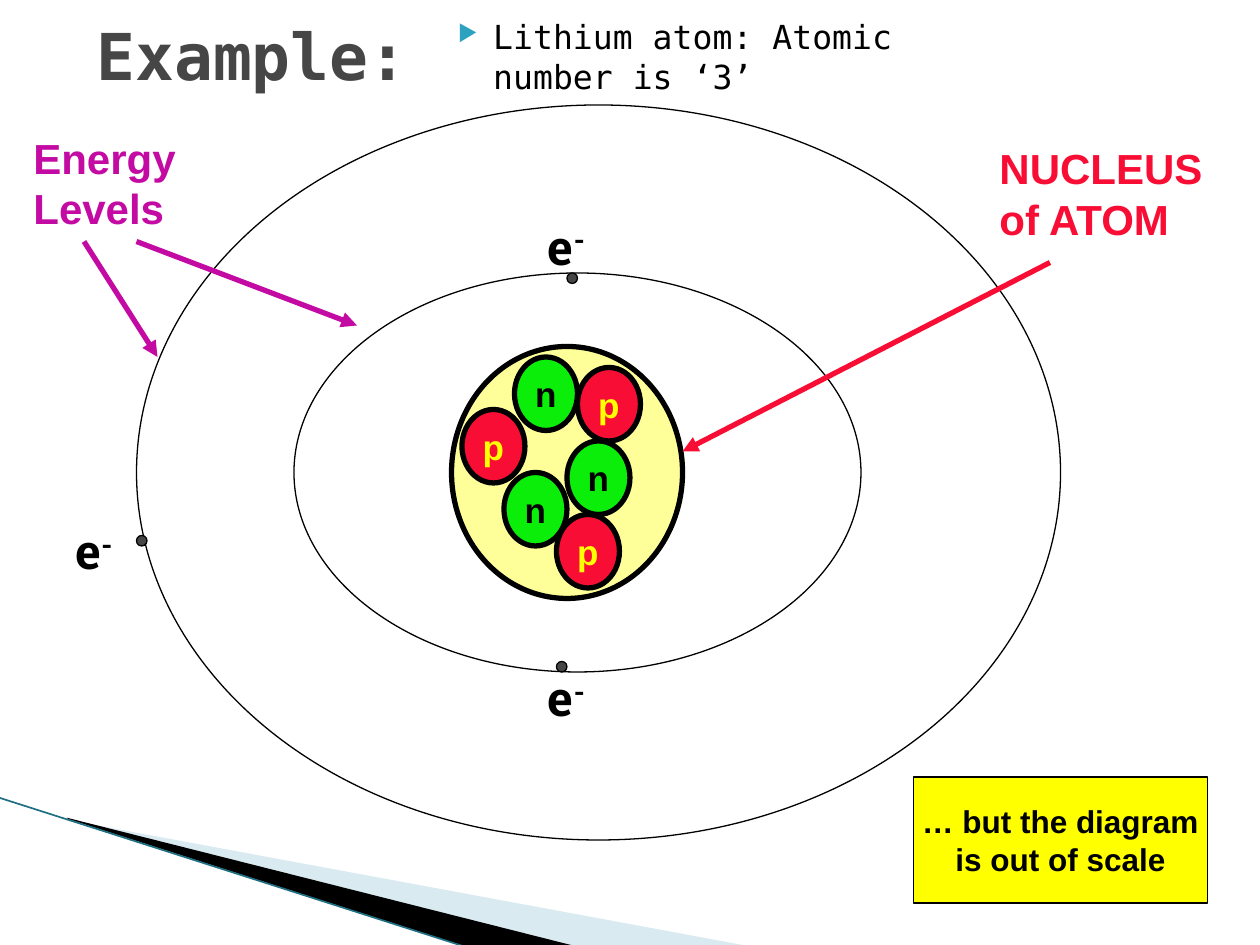
from lxml.etree import SubElement
from pptx import Presentation
from pptx.dml.color import RGBColor
from pptx.enum.shapes import MSO_CONNECTOR, MSO_SHAPE
from pptx.enum.text import MSO_ANCHOR, PP_ALIGN
from pptx.oxml.ns import qn
from pptx.util import Inches, Pt

COLORS = {
    "black": "000000", "gray": "464646", "teal": "1F6F82", "mist": "A0CBDC",
    "bullet": "2DA2BF", "core": "FFFF99", "neutron": "0AEE0A",
    "proton": "F80E35", "level": "C30BA4", "yellow": "FFFF00",
}
MONO, SANS, SLAB = "DejaVu Sans Mono", "Arial", "Roboto Slab"
NEUTRONS = [(48, 45), (54, 42), (49, 34)]
PROTONS = [(44, 39), (53, 49), (55, 35)]
ELECTRON_LABELS = [(6, 49), (51, 63), (51, 20)]
ELECTRONS = [(53, 63), (54, 26), (13, 51)]


def grid(cells):
    """Return the length of a number of cells, twelve to the inch."""
    return Inches(cells / 12)


def rgb(name):
    """Look up a colour by its name."""
    return RGBColor.from_string(COLORS[name])


def style_text(frame, size, font, color, bold=True, align=PP_ALIGN.LEFT):
    """Format every run of a text frame."""
    for paragraph in frame.paragraphs:
        paragraph.alignment = align
        for run in paragraph.runs:
            run.font.size, run.font.name, run.font.bold = Pt(size), font, bold
            run.font.color.rgb = rgb(color)


def add_label(slide, box, words, size, font, color, bold=True):
    """Add a wrapped text box and return its text frame."""
    frame = slide.shapes.add_textbox(*map(grid, box)).text_frame
    frame.word_wrap = True
    frame.text = words
    style_text(frame, size, font, color, bold)
    return frame


def add_figure(slide, box, fill=None, weight=0.75, kind=MSO_SHAPE.OVAL):
    """Add a black-edged shape, hollow unless a fill is named."""
    figure = slide.shapes.add_shape(kind, *map(grid, box))
    figure.shadow.inherit = False
    if fill:
        figure.fill.solid()
        figure.fill.fore_color.rgb = rgb(fill)
    else:
        figure.fill.background()
    figure.line.color.rgb = rgb("black")
    figure.line.width = Pt(weight)
    return figure


def add_caption(figure, words, size, color):
    """Centre unwrapped words in a shape."""
    frame = figure.text_frame
    frame.word_wrap = False
    frame.vertical_anchor = MSO_ANCHOR.MIDDLE
    frame.text = words
    style_text(frame, size, SANS, color, align=PP_ALIGN.CENTER)


def add_particles(slide, places, letter, fill, color):
    """Add the nucleus particles of one kind."""
    for place in places:
        particle = add_figure(slide, (*place, 6, 7), fill, 3)
        add_caption(particle, letter, 20, color)


def add_line(slide, start, end, color, weight=3, arrow=True):
    """Add a straight line, with an arrowhead at its end if wanted."""
    line = slide.shapes.add_connector(
        MSO_CONNECTOR.STRAIGHT, *map(grid, (*start, *end)))
    line.line.color.rgb = rgb(color)
    line.line.width = Pt(weight)
    if arrow:
        SubElement(line.line._get_or_add_ln(), qn("a:tailEnd"), type="triangle")
    SubElement(line._element.spPr, qn("a:effectLst"))


def add_wedge(slide, points, color, opacity=100):
    """Add a borderless polygon through points given in inches."""
    start, *rest = [(Inches(x), Inches(y)) for x, y in points]
    builder = slide.shapes.build_freeform(*start, scale=1.0)
    builder.add_line_segments(rest, close=True)
    wedge = builder.convert_to_shape()
    wedge.shadow.inherit = False
    wedge.fill.solid()
    wedge.fill.fore_color.rgb = rgb(color)
    wedge.line.fill.background()
    tint = wedge._element.spPr.find(qn("a:solidFill"))[0]
    SubElement(tint, qn("a:alpha"), val=str(opacity * 1000))


def add_swoosh(slide):
    """Add the decoration in the lower left corner."""
    add_wedge(slide, [(0.55, 6.51), (5.95, 7.51), (4.56, 7.51), (0.55, 6.5)],
              "mist", 40)
    add_wedge(slide, [(0.53, 6.49), (4.57, 7.51), (3.72, 7.52), (0.54, 6.5)],
              "black")
    add_line(slide, (-0.12, 75.96), (44.52, 90.24), "teal", 0.95, arrow=False)


def add_heading(slide):
    """Add the title and the bulleted statement beside it."""
    add_label(slide, (8, 2, 33, 6.4), "Example:", 36.9, MONO,
              "gray").vertical_anchor = MSO_ANCHOR.MIDDLE
    statement = add_label(slide, (41, 1, 47, 7.6),
                          "Lithium atom: Atomic number is ‘3’",
                          18.9, MONO, "black", bold=False)
    props = statement.paragraphs[0]._p.get_or_add_pPr()
    props.set("marL", str(Inches(0.4)))
    props.set("indent", str(Inches(-0.28)))
    tint = SubElement(props, qn("a:buClr"))
    SubElement(tint, qn("a:srgbClr"), val=COLORS["bullet"])
    SubElement(props, qn("a:buSzPct"), val="68000")
    SubElement(props, qn("a:buChar"), char="▶")


def add_electron_label(slide, place):
    """Add the symbol of an electron with its raised charge."""
    frame = add_label(slide, (*place, 9, 6.8), "e", 28, SLAB, "black")
    charge = frame.paragraphs[0].add_run()
    charge.text = "-"
    style_text(frame, 28, SLAB, "black")
    charge._r.get_or_add_rPr().set("baseline", "30000")


def add_atom(slide):
    """Add the nucleus, the energy levels and the electrons."""
    add_figure(slide, (43, 33, 22, 24), "core", 3)
    add_particles(slide, NEUTRONS, "n", "neutron", "black")
    add_particles(slide, PROTONS, "p", "proton", "yellow")
    for place in ELECTRON_LABELS:
        add_electron_label(slide, place)
    for level in [(28, 26, 54, 38), (13, 10, 88, 70)]:
        add_figure(slide, level)
    for place in ELECTRONS:
        add_figure(slide, (*place, 1, 1), "gray")


def add_annotations(slide):
    """Add the labels with their arrows and the note on scale."""
    add_label(slide, (2, 12, 20, 10.8), "Energy Levels", 24, SANS, "level")
    add_line(slide, (8, 23), (15, 34), "level")
    add_line(slide, (13, 23), (34, 31), "level")
    add_label(slide, (94, 13, 22, 18), "NUCLEUS of ATOM", 24, SANS, "proton")
    add_line(slide, (100, 25), (65, 43), "proton")
    note = add_figure(slide, (87, 74, 28, 12), "yellow",
                      kind=MSO_SHAPE.RECTANGLE)
    add_caption(note, "… but the diagram\nis out of scale", 18, "black")


def main():
    """Build and save the slide."""
    deck = Presentation()
    deck.slide_width, deck.slide_height = grid(120), grid(90)
    slide = deck.slides.add_slide(deck.slide_layouts[6])
    add_swoosh(slide)
    add_heading(slide)
    add_atom(slide)
    add_annotations(slide)
    deck.save("out.pptx")


if __name__ == "__main__":
    main()
